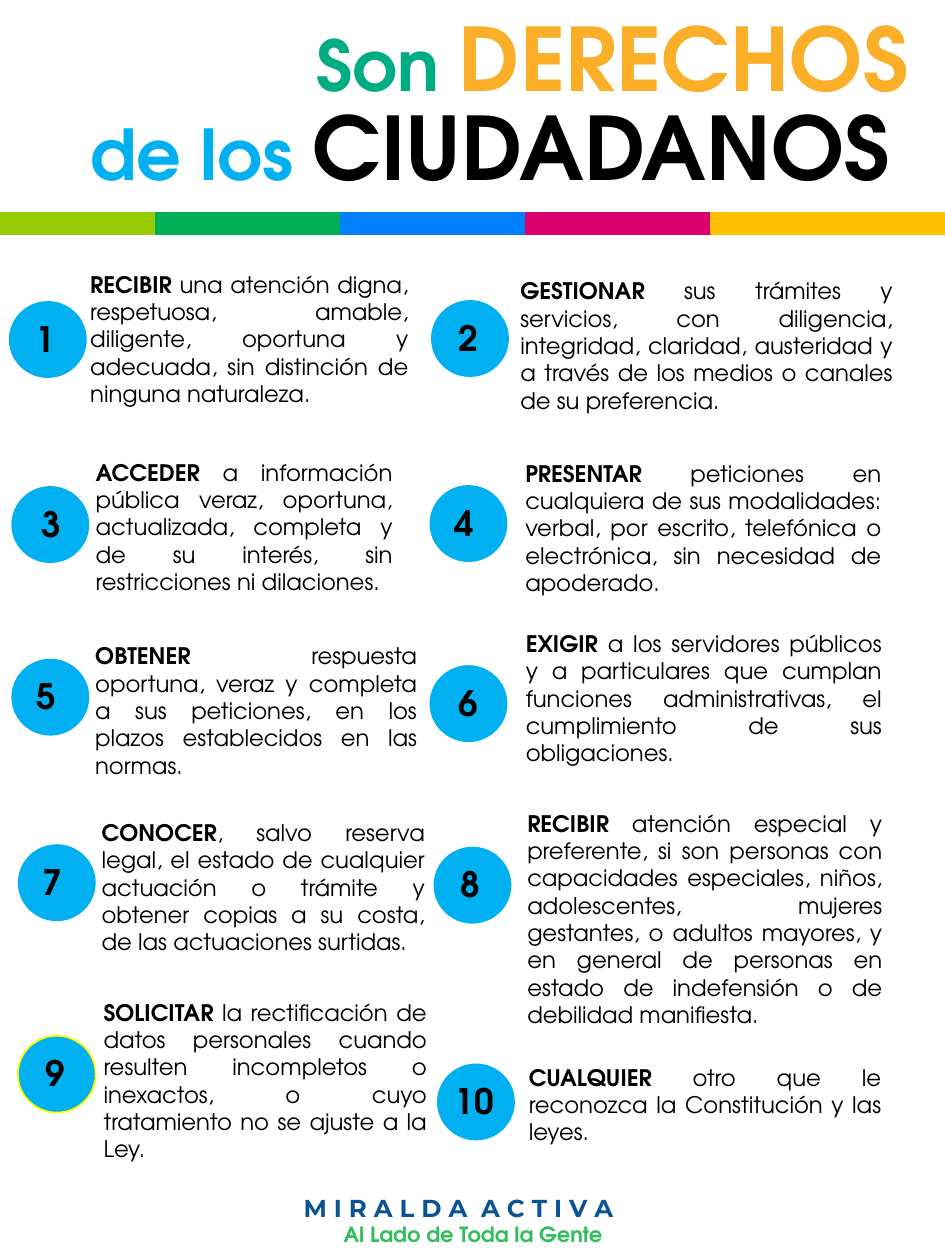
from dataclasses import dataclass

from pptx import Presentation
from pptx.dml.color import RGBColor
from pptx.enum.shapes import MSO_SHAPE
from pptx.enum.text import MSO_ANCHOR, MSO_AUTO_SIZE, PP_ALIGN
from pptx.util import Cm, Pt


@dataclass(frozen=True)
class Theme:
    """Fonts, type sizes in points and colours of the sheet."""

    font: str = "TeX Gyre Adventor"
    sans: str = "Montserrat"
    small: int = 40
    large: int = 50
    body: int = 13
    digit: int = 20
    brand: int = 14
    motto: int = 12
    ink: str = "000000"
    sky: str = "00B0F0"
    teal: str = "00AC82"
    amber: str = "FBAF28"
    ring: str = "FFFF00"
    navy: str = "0C5393"
    leaf: str = "30BE59"
    bands: tuple = ("99CC00", "00B058", "007FFE", "DA006D", "FFC000")


THEME = Theme()

RIGHTS = (
    (0.18, 6.07, 0.46, (1.57, 5.33, 6.91, 3.02), "RECIBIR",
     " una atención digna, respetuosa, amable, diligente, oportuna y "
     "adecuada, sin distinción de ninguna naturaleza."),
    (8.69, 6.05, 8.99, (10.24, 5.46, 8, 3.02), "GESTIONAR",
     " sus trámites y servicios, con diligencia, integridad, claridad, "
     "austeridad y a través de los medios o canales de su preferencia."),
    (0.23, 9.8, 0.58, (1.68, 9.12, 6.48, 3.02), "ACCEDER",
     " a información pública veraz, oportuna, actualizada, completa y de "
     "su interés, sin restricciones ni dilaciones."),
    (8.66, 9.78, 8.92, (10.34, 9.14, 7.67, 3.02), "PRESENTAR",
     " peticiones en cualquiera de sus modalidades: verbal, por escrito, "
     "telefónica o electrónica, sin necesidad de apoderado."),
    (0.23, 13.28, 0.48, (1.67, 12.82, 6.98, 3.02), "OBTENER",
     " respuesta oportuna, veraz y completa a sus peticiones, en los "
     "plazos establecidos en las normas."),
    (8.66, 13.41, 8.99, (10.35, 12.57, 7.67, 3.02), "EXIGIR ",
     "a los servidores públicos y a particulares que cumplan funciones "
     "administrativas, el cumplimiento de sus obligaciones."),
    (0.36, 17.02, 0.61, (1.8, 16.38, 7.01, 3.02), "CONOCER",
     ", salvo reserva legal, el estado de cualquier actuación o trámite y "
     "obtener copias a su costa, de las actuaciones surtidas."),
    (8.74, 17.07, 9.04, (10.38, 16.19, 7.65, 4.7), "RECIBIR",
     " atención especial y preferente, si son personas con capacidades "
     "especiales, niños, adolescentes, mujeres gestantes, o adultos "
     "mayores, y en general de personas en estado de indefensión o de "
     "debilidad manifiesta."),
    (0.36, 20.88, 0.66, (1.84, 20, 7.01, 3.58), "SOLICITAR",
     " la rectificación de datos personales cuando resulten incompletos o "
     "inexactos, o cuyo tratamiento no se ajuste a la Ley."),
    (8.81, 21.44, 8.92, (10.41, 21.31, 7.6, 1.93), "CUALQUIER",
     " otro que le reconozca la Constitución y las leyes."),
)


def style(run, size, tint, bold=True, font=THEME.font):
    """Set the type of one run."""
    run.font.name = font
    run.font.size = Pt(size)
    run.font.bold = bold
    run.font.color.rgb = RGBColor.from_string(tint)


def write(frame, parts, align=PP_ALIGN.LEFT):
    """Fill a frame with one paragraph of (text, type settings) parts."""
    frame.word_wrap = True
    frame.vertical_anchor = MSO_ANCHOR.TOP
    para = frame.paragraphs[0]
    para.text = parts[0][0]
    for text, _ in parts[1:]:
        para.add_run().text = text
    para.alignment = align
    para.space_before = Pt(0)
    for run, (_, look) in zip(para.runs, parts):
        style(run, **look)


def head(holder, box, parts):
    """Move a title placeholder and fill it."""
    holder.left, holder.top, holder.width, holder.height = map(Cm, box)
    write(holder.text_frame, parts)
    holder.text_frame.auto_size = MSO_AUTO_SIZE.NONE


def label(slide, box, parts, align=PP_ALIGN.LEFT):
    """Add a text box that grows with its text."""
    frame = slide.shapes.add_textbox(*map(Cm, box)).text_frame
    write(frame, parts, align)
    frame.auto_size = MSO_AUTO_SIZE.SHAPE_TO_FIT_TEXT


def form(slide, kind, box, fill, line=None):
    """Add a flat shape with an optional thin outline."""
    shape = slide.shapes.add_shape(kind, *map(Cm, box))
    shape.shadow.inherit = False
    shape.fill.solid()
    shape.fill.fore_color.rgb = RGBColor.from_string(fill)
    if line:
        shape.line.color.rgb = RGBColor.from_string(line)
        shape.line.width = Pt(1)
    else:
        shape.line.fill.background()


def stripe(slide):
    """Draw the colour bands, each running up to the next one."""
    edges = [0] + [3.15 + 3.73 * i for i in range(4)] + [19.05]
    for left, right, tint in zip(edges, edges[1:], THEME.bands):
        form(slide, MSO_SHAPE.RECTANGLE, (left, 4.29, right - left, 0.43),
             tint, tint)


def claim(slide, count, item):
    """Draw one numbered right: disc, digit and text."""
    left, top, digit, box, lead, rest = item
    line = THEME.ring if count == 9 else None
    form(slide, MSO_SHAPE.OVAL, (left, top, 1.57, 1.55), THEME.sky, line)
    label(slide, box, [
        (lead, dict(size=THEME.body, tint=THEME.ink)),
        (rest, dict(size=THEME.body, tint=THEME.ink, bold=False)),
    ], PP_ALIGN.JUSTIFY)
    label(slide, (digit, top + 0.2, 3, 1.11),
          [(str(count), dict(size=THEME.digit, tint=THEME.ink))])


def main():
    """Build the sheet and save it."""
    deck = Presentation()
    deck.slide_width, deck.slide_height = Cm(19.05), Cm(25.4)
    slide = deck.slides.add_slide(deck.slide_layouts[0])
    head(slide.shapes.title, (6.12, -0.05, 12.93, 2.95), [
        ("Son ", dict(size=THEME.small, tint=THEME.teal)),
        ("DERECHOS", dict(size=THEME.large, tint=THEME.amber)),
    ])
    head(slide.placeholders[1], (1.57, 1.75, 17.3, 2.95), [
        ("de los ", dict(size=THEME.small, tint=THEME.sky)),
        ("CIUDADANOS", dict(size=THEME.large, tint=THEME.ink)),
    ])
    stripe(slide)
    for count, item in enumerate(RIGHTS, 1):
        claim(slide, count, item)
    label(slide, (5.87, 23.93, 13, 0.86), [
        ("M I R A L D A  A C T I V A",
         dict(size=THEME.brand, tint=THEME.navy, font=THEME.sans)),
    ])
    label(slide, (6.68, 24.51, 11.33, 0.76), [
        ("Al Lado de Toda la Gente",
         dict(size=THEME.motto, tint=THEME.leaf)),
    ])
    deck.save("out.pptx")


if __name__ == "__main__":
    main()
